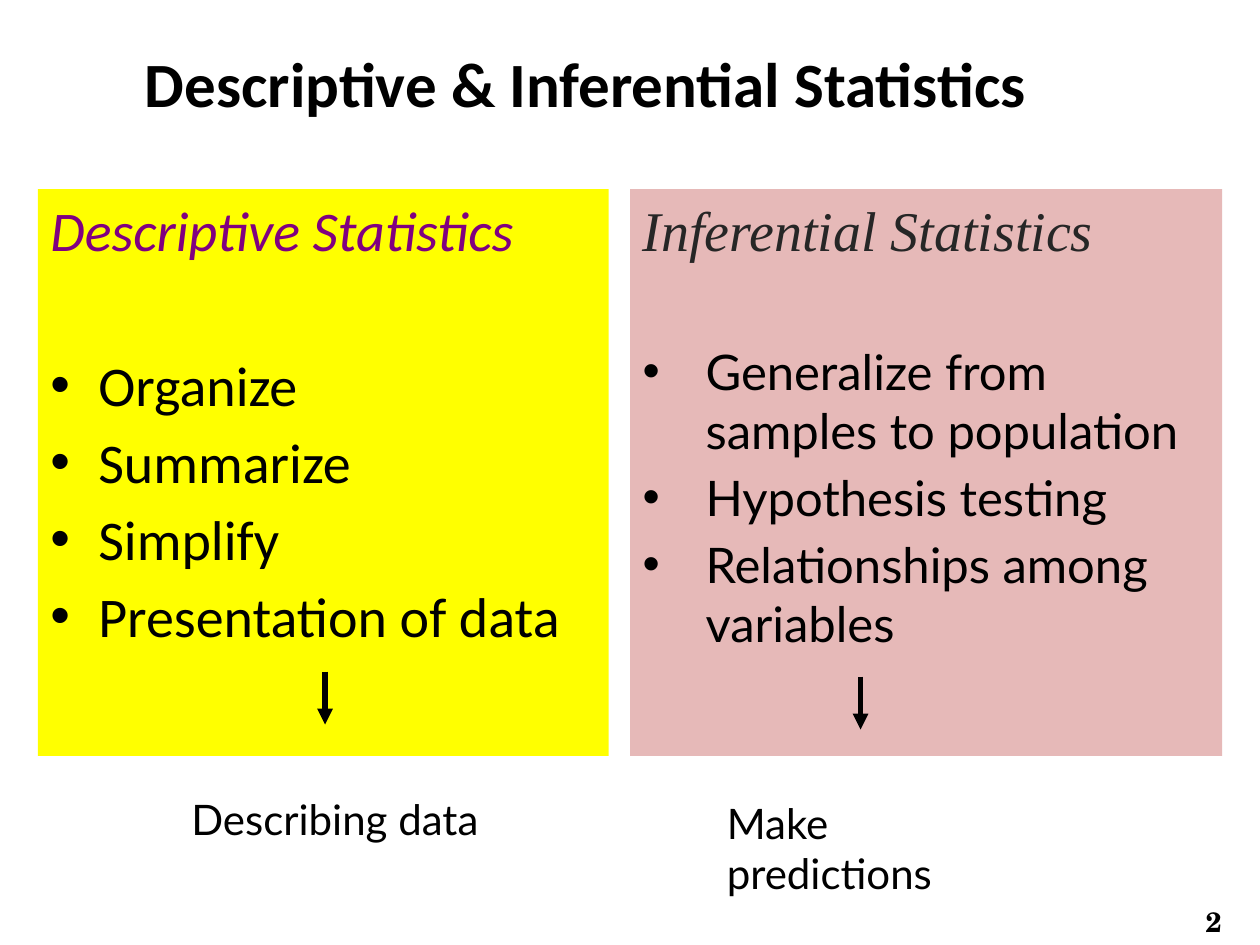
from pptx import Presentation
from pptx.dml.color import RGBColor
from pptx.enum import shapes, text
from pptx.oxml.ns import qn
from pptx.util import Inches, Pt
from lxml import etree

# Content
TITLE = "Descriptive & Inferential Statistics"
PAGE = "2"
PANELS = [
    dict(heading="Descriptive Statistics", heading_font="Calibri",
         heading_color="800080", fill="FFFF00", box=(0.3, 1.5, 4.53, 4.5),
         bullets=["Organize", "Summarize", "Simplify", "Presentation of data"],
         font="Calibri", size=32, indent=0.38, first_gap=50, gap=5.7,
         outcome="Describing data", outcome_box=(1.42, 6.25, 2.48, 0.5),
         wrap=False, arrow=(2.58, 5.33)),
    dict(heading="Inferential Statistics", heading_font="Times New Roman",
         heading_color="262626", fill="E6B9B8", box=(5, 1.5, 4.7, 4.5),
         bullets=["Generalize from samples to population",
                  "Hypothesis testing", "Relationships among variables"],
         font="Lato", size=28, indent=0.5, first_gap=45, gap=4.7,
         outcome="Make predictions", outcome_box=(5.67, 6.28, 2.6, 0.91),
         wrap=True, arrow=(6.83, 5.37)),
]
THEME = dict(ink="000000", title=36, heading=32, outcome=24, page=16,
             title_font="Calibri", outcome_font="Lato",
             page_font="TeX Gyre Schola", arrow_width=3)
ARROW_LENGTH = 0.42


def place(shape, box):
    shape.left, shape.top, shape.width, shape.height = map(Inches, box)


def add_run(p, words, font, size, color=THEME["ink"], bold=False, italic=False):
    p.alignment = text.PP_ALIGN.LEFT
    r = p.add_run()
    r.text = words
    r.font.name, r.font.size = font, Pt(size)
    r.font.bold, r.font.italic = bold, italic
    r.font.color.rgb = RGBColor.from_string(color)


def set_bullet(p, char=None, indent=0):
    pPr = p._p.get_or_add_pPr()
    pPr.set("marL", str(Inches(indent)))
    pPr.set("indent", str(-Inches(indent)))
    if char:
        etree.SubElement(pPr, qn("a:buFont")).set("typeface", "Arial")
        etree.SubElement(pPr, qn("a:buChar")).set("char", char)
    else:
        etree.SubElement(pPr, qn("a:buNone"))


def prepare_frame(shape, wrap=True):
    tf = shape.text_frame
    tf.word_wrap = wrap
    tf.auto_size = text.MSO_AUTO_SIZE.NONE
    tf.vertical_anchor = text.MSO_ANCHOR.TOP
    return tf


def add_label(s, box, words, font, size, wrap=False, bold=False):
    tf = prepare_frame(s.shapes.add_textbox(*map(Inches, box)), wrap)
    add_run(tf.paragraphs[0], words, font, size, bold=bold)


def fill_panel(sp, panel):
    place(sp, panel["box"])
    sp.fill.solid()
    sp.fill.fore_color.rgb = RGBColor.from_string(panel["fill"])
    tf = prepare_frame(sp)
    p = tf.paragraphs[0]
    set_bullet(p)
    p.space_before = Pt(0)
    add_run(p, panel["heading"], panel["heading_font"], THEME["heading"],
            panel["heading_color"], italic=True)
    for i, words in enumerate(panel["bullets"]):
        p = tf.add_paragraph()
        set_bullet(p, "•", panel["indent"])
        p.space_before = Pt(panel["gap"] if i else panel["first_gap"])
        add_run(p, words, panel["font"], panel["size"])


def add_arrow(s, x, y):
    line = s.shapes.add_connector(
        shapes.MSO_CONNECTOR.STRAIGHT, Inches(x), Inches(y),
        Inches(x), Inches(y + ARROW_LENGTH))
    line.line.color.rgb = RGBColor.from_string(THEME["ink"])
    line.line.width = Pt(THEME["arrow_width"])
    etree.SubElement(line.line._get_or_add_ln(), qn("a:tailEnd")).set("type", "triangle")
    etree.SubElement(line._element.spPr, qn("a:effectLst"))


def main():
    prs = Presentation()
    prs.slide_width, prs.slide_height = Inches(10), Inches(7.5)
    s = prs.slides.add_slide(prs.slide_layouts[3])  # Two Content
    title, *bodies = s.placeholders

    # Title
    place(title, (1.05, 0.3, 8.25, 0.71))
    add_run(prepare_frame(title).paragraphs[0], TITLE,
            THEME["title_font"], THEME["title"], bold=True)

    # Panels, each with an arrow down to its outcome
    for body, panel in zip(bodies, PANELS):
        fill_panel(body, panel)
        add_arrow(s, *panel["arrow"])
        add_label(s, panel["outcome_box"], panel["outcome"],
                  THEME["outcome_font"], THEME["outcome"], panel["wrap"])

    # Page number
    add_label(s, (9.47, 7.13, 0.54, 0.37), PAGE,
              THEME["page_font"], THEME["page"], wrap=True, bold=True)
    prs.save("out.pptx")


if __name__ == "__main__":
    main()
